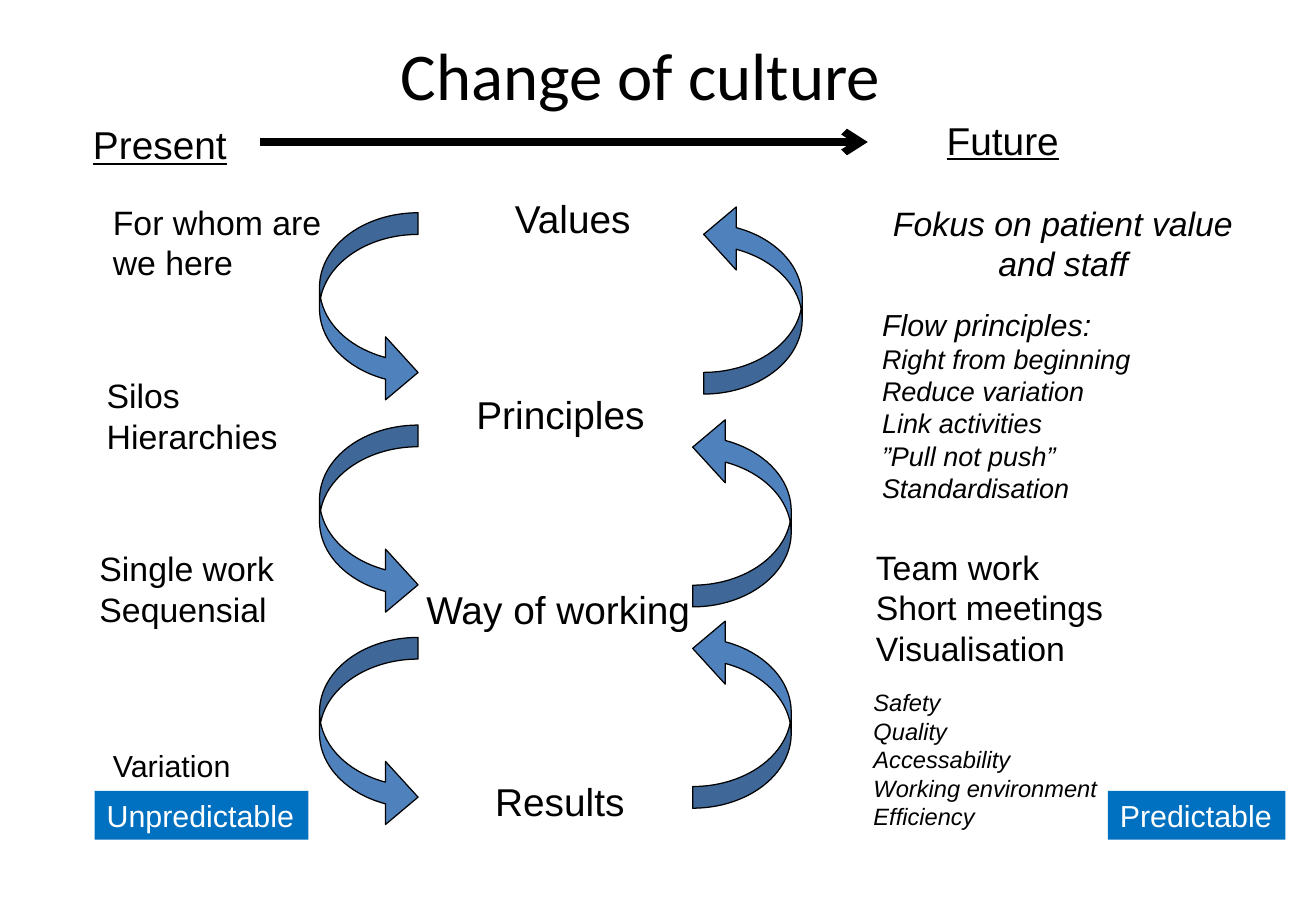
import pptx
import pptx.util
import pptx.dml.color
import pptx.enum.shapes
import pptx.enum.text
from lxml import etree
from pptx.oxml.ns import qn

Cm, Pt = pptx.util.Cm, pptx.util.Pt
RGBColor = pptx.dml.color.RGBColor
MSO_SHAPE = pptx.enum.shapes.MSO_SHAPE
PP_ALIGN = pptx.enum.text.PP_ALIGN
MSO_ANCHOR = pptx.enum.text.MSO_ANCHOR
MSO_AUTO_SIZE = pptx.enum.text.MSO_AUTO_SIZE

BLACK = RGBColor(0x00, 0x00, 0x00)
WHITE = RGBColor(0xFF, 0xFF, 0xFF)
ARROW_BLUE = RGBColor(0x4F, 0x81, 0xBD)
LABEL_BLUE = RGBColor(0x00, 0x70, 0xC0)

TITLE = "Change of culture"
HEADINGS = [
    ("Present", (1.68, 2.41, 3.33, 1.24)),
    ("Future", (19.53, 2.31, 2.87, 1.24)),
]
LEVELS = [
    ("Values", (8.99, 3.94, 5.97, 1.24)),
    ("Principles", (9.42, 8.05, 4.6, 1.24)),
    ("Way of working", (8.64, 12.12, 6.07, 1.24)),
    ("Results", (10.08, 16.13, 3.25, 1.24)),
]
PRESENT = [
    (["For whom are", "we here"], 20, (2.11, 4.09, 5.11, 1.96)),
    (["Silos", "Hierarchies"], 20, (1.98, 7.72, 4.11, 1.96)),
    (["Single work", "Sequensial"], 20, (1.83, 11.33, 4.19, 1.96)),
    (["Variation"], 18, (2.11, 15.49, 3.0, 1.02)),
]
PATIENT_VALUE = ["Fokus on patient value", "and staff"]
FLOW = ["Flow principles:", "Right from beginning", "Reduce variation",
        "Link activities", "”Pull not push”", "Standardisation"]
TEAM = ["Team work", "Short meetings", "Visualisation"]
RESULTS = ["Safety", "Quality", "Accessability", "Working environment", "Efficiency"]
OUTCOMES = [
    ("Unpredictable", (1.98, 16.54, 4.47, 1.02)),
    ("Predictable", (23.16, 16.54, 3.71, 1.02)),
]
DOWN_X, DOWN_TOP, DOWN_STEP = 6.68, 4.45, 4.44
UP_ARROWS = [(14.71, 4.24), (14.48, 8.69), (14.48, 12.9)]
ARROW_SIZE = (2.06, 4.0)


def write(sp, lines, size, color=BLACK, align=PP_ALIGN.LEFT, italic=False,
          underline=False, wrap=False):
    """Fill a shape with formatted lines and return its paragraphs."""
    tf = sp.text_frame
    tf.text = "\n".join(lines)
    tf.word_wrap = wrap
    tf.auto_size = MSO_AUTO_SIZE.SHAPE_TO_FIT_TEXT
    tf.vertical_anchor = MSO_ANCHOR.TOP
    for p in tf.paragraphs:
        p.alignment = align
        for r in p.runs:
            r.font.name = "Arial"
            r.font.size = Pt(size)
            r.font.color.rgb = color
            r.font.italic = italic
            r.font.underline = underline
    return tf.paragraphs


def add_text(s, box, lines, size, **style):
    """Add a text box and return its paragraphs."""
    return write(s.shapes.add_textbox(*map(Cm, box)), lines, size, **style)


def add_curved_arrow(s, x, y, rotation):
    """Add one curved arrow between two levels."""
    sp = s.shapes.add_shape(MSO_SHAPE.CURVED_RIGHT_ARROW,
                            *map(Cm, (x, y) + ARROW_SIZE))
    sp.shadow.inherit = False
    sp.rotation = rotation
    for i, value in enumerate((0.22, 0.64, 0.33)):
        sp.adjustments[i] = value
    sp.fill.solid()
    sp.fill.fore_color.rgb = ARROW_BLUE
    sp.line.color.rgb = BLACK
    sp.line.width = Pt(0.75)


def add_timeline(s):
    """Add the arrow from present to future."""
    line = s.shapes.add_connector(pptx.enum.shapes.MSO_CONNECTOR.STRAIGHT,
                                  Cm(5.44), Cm(2.97), Cm(18.14), Cm(2.97))
    line.line.color.rgb = BLACK
    line.line.width = Pt(4.5)
    etree.SubElement(line.line._get_or_add_ln(), qn("a:tailEnd"), type="arrow")
    etree.SubElement(line._element.spPr, qn("a:effectLst"))


def main():
    """Build the slide."""
    prs = pptx.Presentation()
    prs.slide_width, prs.slide_height = Cm(27.51), Cm(19.05)
    s = prs.slides.add_slide(prs.slide_layouts[5])

    title = s.shapes.title
    title.left, title.top, title.width, title.height = map(Cm, (1.35, 0.71, 24.08, 1.65))
    write(title, [TITLE], 39.6, align=PP_ALIGN.CENTER, wrap=True)
    title.text_frame.auto_size = MSO_AUTO_SIZE.NONE
    title.text_frame.vertical_anchor = MSO_ANCHOR.MIDDLE
    title.text_frame.paragraphs[0].runs[0].font.name = "Calibri"

    for i, (x, y) in enumerate(UP_ARROWS):
        add_curved_arrow(s, DOWN_X, DOWN_TOP + i * DOWN_STEP, 0)
        add_curved_arrow(s, x, y, 180)
    add_timeline(s)

    for text, box in HEADINGS:
        add_text(s, box, [text], 23, align=PP_ALIGN.CENTER, underline=True)
    for text, box in LEVELS:
        add_text(s, box, [text], 23, align=PP_ALIGN.CENTER)
    for lines, size, box in PRESENT:
        add_text(s, box, lines, size)

    add_text(s, (18.29, 4.11, 7.87, 1.96), PATIENT_VALUE, 20,
             align=PP_ALIGN.CENTER, italic=True)
    flow = add_text(s, (18.19, 6.27, 8.18, 4.45), FLOW, 16, italic=True, wrap=True)
    flow[0].runs[0].font.size = Pt(18)
    add_text(s, (18.06, 11.3, 5.31, 2.82), TEAM, 20)
    add_text(s, (18.01, 14.27, 5.33, 3.25), RESULTS, 14, italic=True, wrap=True)

    for text, box in OUTCOMES:
        sp = s.shapes.add_shape(MSO_SHAPE.RECTANGLE, *map(Cm, box))
        sp.shadow.inherit = False
        sp.fill.solid()
        sp.fill.fore_color.rgb = LABEL_BLUE
        sp.line.fill.background()
        write(sp, [text], 18, color=WHITE)

    prs.save("out.pptx")


if __name__ == "__main__":
    main()
